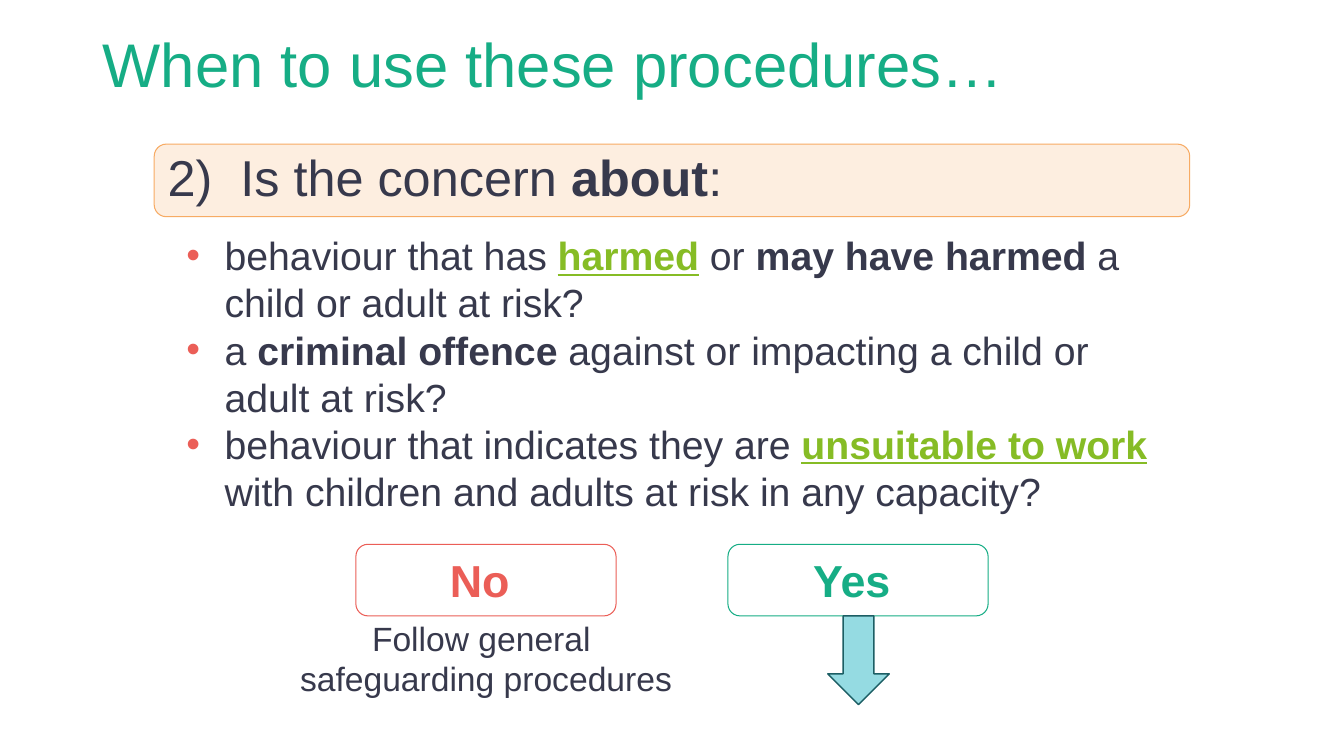
import dataclasses
import typing

import pptx
import pptx.dml.color
import pptx.enum.shapes
import pptx.enum.text
import pptx.oxml
import pptx.util

Inches = pptx.util.Inches
Pt = pptx.util.Pt
Shape = pptx.enum.shapes.MSO_SHAPE
Anchor = pptx.enum.text.MSO_ANCHOR
Align = pptx.enum.text.PP_ALIGN
Fit = pptx.enum.text.MSO_AUTO_SIZE


@dataclasses.dataclass(frozen=True)
class Theme:
    font: str = "Arial"
    ink: str = "37394C"
    green: str = "16AD85"
    lime: str = "86BC25"
    red: str = "EB5E57"
    peach: str = "FDEEE0"
    orange: str = "F7AB64"
    aqua: str = "95DBE2"
    teal: str = "1C5E64"
    title: int = 44
    head: int = 36
    answer: int = 32
    body: int = 28
    note: int = 24


class Box(typing.NamedTuple):
    left: float
    top: float
    width: float
    height: float

    def lengths(self) -> list[pptx.util.Length]:
        return [Inches(side) for side in self]


class Run(typing.NamedTuple):
    text: str
    bold: bool = False
    key: bool = False


class Answer(typing.NamedTuple):
    text: str
    left: float
    color: str


THEME = Theme()
HEAD = [Run("2)  Is the concern "), Run("about", True), Run(":")]
POINTS = [
    [Run("behaviour that has "), Run("harmed", True, True), Run(" or "),
     Run("may have harmed", True), Run(" a child or adult at risk?")],
    [Run("a "), Run("criminal offence ", True),
     Run("against or impacting a child or adult at risk?")],
    [Run("behaviour that indicates they are "), Run("unsuitable", True, True),
     Run(" ", False, True), Run("to work ", True, True),
     Run("with children and adults at risk in any capacity?")],
]
ANSWERS = [Answer("No ", 3.53, THEME.red), Answer("Yes ", 7.22, THEME.green)]


def rgb(code: str) -> pptx.dml.color.RGBColor:
    return pptx.dml.color.RGBColor.from_string(code)


def style(para, size: int, color: str) -> None:
    para.font.name = THEME.font
    para.font.size = Pt(size)
    para.font.color.rgb = rgb(color)


def write(para, runs: list[Run]) -> None:
    """Add runs, with key words underlined in lime."""
    for item in runs:
        run = para.add_run()
        run.text = item.text
        if item.bold:
            run.font.bold = True
        if item.key:
            run.font.underline = True
            run.font.color.rgb = rgb(THEME.lime)


def bullet(para) -> None:
    props = para._p.get_or_add_pPr()
    props.set("marL", str(Inches(0.38)))
    props.set("indent", str(Inches(-0.38)))
    space = pptx.oxml.ns.nsdecls("a")
    for part in (f'<a:buClr {space}><a:srgbClr val="{THEME.red}"/></a:buClr>',
                 f'<a:buFont {space} typeface="{THEME.font}"/>',
                 f'<a:buChar {space} char="•"/>'):
        props.append(pptx.oxml.parse_xml(part))


def draw(slide, kind: Shape, box: Box, fill: str | None, line: str, width: float = 0.75):
    shape = slide.shapes.add_shape(kind, *box.lengths())
    shape.shadow.inherit = False
    if fill:
        shape.fill.solid()
        shape.fill.fore_color.rgb = rgb(fill)
    else:
        shape.fill.background()
    shape.line.color.rgb = rgb(line)
    shape.line.width = Pt(width)
    return shape


def text_box(slide, box: Box):
    frame = slide.shapes.add_textbox(*box.lengths()).text_frame
    frame.word_wrap = True
    frame.auto_size = Fit.SHAPE_TO_FIT_TEXT
    return frame


def add_title(slide) -> None:
    title = slide.shapes.title
    title.left, title.top, title.width, title.height = Box(0.92, 0.02, 11.5, 1.3).lengths()
    frame = title.text_frame
    frame.text = "When to use these procedures…"
    frame.auto_size = Fit.NONE
    frame.vertical_anchor = Anchor.MIDDLE
    para = frame.paragraphs[0]
    para.alignment = Align.LEFT
    para.line_spacing = 0.9
    style(para, THEME.title, THEME.green)


def add_head(slide) -> None:
    shape = draw(slide, Shape.ROUNDED_RECTANGLE, Box(1.53, 1.43, 10.27, 0.72),
                 THEME.peach, THEME.orange)
    para = shape.text_frame.paragraphs[0]
    para.alignment = Align.LEFT
    para.line_spacing = 0.9
    style(para, THEME.head, THEME.ink)
    write(para, HEAD)


def add_points(slide) -> None:
    frame = text_box(slide, Box(1.75, 2.25, 10.06, 2.93))
    for i, runs in enumerate(POINTS):
        para = frame.add_paragraph() if i else frame.paragraphs[0]
        bullet(para)
        style(para, THEME.body, THEME.ink)
        write(para, runs)


def add_note(slide) -> None:
    para = text_box(slide, Box(2.79, 6.08, 4.06, 0.91)).paragraphs[0]
    para.text = "Follow general \vsafeguarding procedures"
    para.alignment = Align.CENTER
    style(para, THEME.note, THEME.ink)


def add_answer(slide, answer: Answer) -> None:
    shape = draw(slide, Shape.ROUNDED_RECTANGLE, Box(answer.left, 5.4, 2.58, 0.71),
                 None, answer.color)
    frame = shape.text_frame
    frame.vertical_anchor = Anchor.TOP
    frame.auto_size = Fit.SHAPE_TO_FIT_TEXT
    para = frame.paragraphs[0]
    para.text = answer.text
    para.alignment = Align.CENTER
    style(para, THEME.answer, answer.color)
    para.font.bold = True


def main() -> None:
    deck = pptx.Presentation()
    deck.slide_width, deck.slide_height = Inches(13.33), Inches(7.5)
    slide = deck.slides.add_slide(deck.slide_layouts[5])
    add_title(slide)
    add_head(slide)
    add_points(slide)
    add_note(slide)
    for answer in ANSWERS:
        add_answer(slide, answer)
    draw(slide, Shape.DOWN_ARROW, Box(8.21, 6.11, 0.61, 0.88), THEME.aqua, THEME.teal, 1)
    deck.save("out.pptx")


if __name__ == "__main__":
    main()
